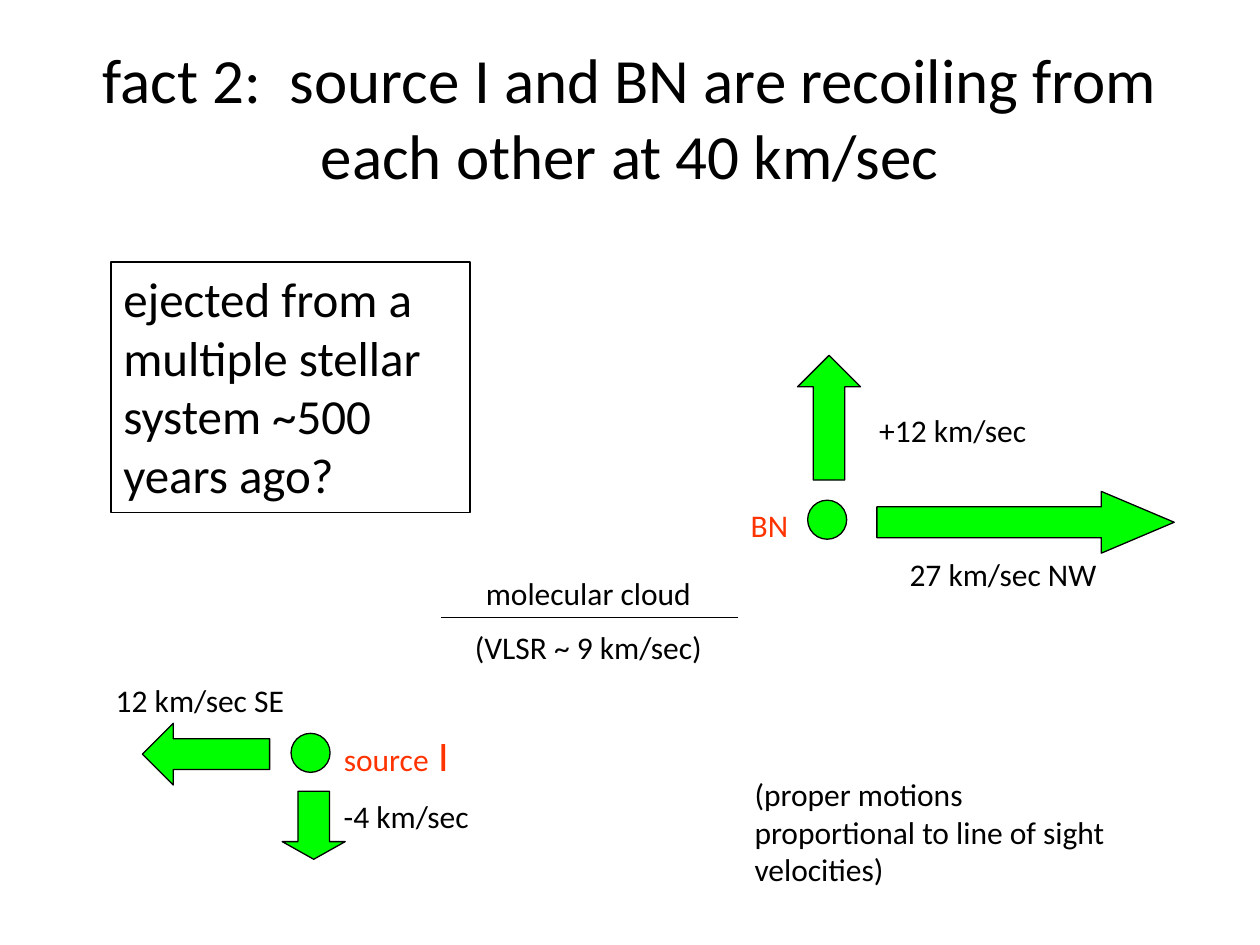
from lxml.etree import SubElement
from pptx import Presentation
from pptx.dml.color import RGBColor
from pptx.enum.shapes import MSO_CONNECTOR, MSO_SHAPE
from pptx.enum.text import MSO_ANCHOR, PP_ALIGN
from pptx.oxml.ns import qn
from pptx.util import Pt

SCALE = 9144  # EMU per px, 100 px to the inch
COLORS = {"ink": "000000", "motion": "00FF00", "star": "FF3300"}


def px(*lengths):
    return [length * SCALE for length in lengths]


class MotionSlide:
    font = "Calibri"
    line_width = Pt(0.75)

    def __init__(self, deck):
        self.page = deck.slides.add_slide(deck.slide_layouts[5])

    def color(self, name):
        return RGBColor.from_string(COLORS[name])

    def style_span(self, span, size, color="ink"):
        span.font.name = self.font
        span.font.size = Pt(size)
        span.font.color.rgb = self.color(color)

    def set_text(self, box, text, size, color="ink", align=PP_ALIGN.LEFT, anchor=MSO_ANCHOR.TOP):
        frame = box.text_frame
        frame.text = text
        frame.word_wrap = True
        frame.vertical_anchor = anchor
        for index, para in enumerate(frame.paragraphs):
            para.alignment = align
            para.space_before = Pt(size / 2 if index else 0)
            for span in para.runs:
                self.style_span(span, size, color)

    def title(self, text, *place):
        box = self.page.shapes.title
        box.left, box.top, box.width, box.height = px(*place)
        self.set_text(box, text, 36, align=PP_ALIGN.CENTER, anchor=MSO_ANCHOR.MIDDLE)

    def label(self, text, *place, **style):
        box = self.page.shapes.add_textbox(*px(*place))
        self.set_text(box, text, 18, **style)
        return box

    def shape(self, kind, *place, fill=None):
        shape = self.page.shapes.add_shape(kind, *px(*place))
        shape.shadow.inherit = False
        shape.line.color.rgb = self.color("ink")
        shape.line.width = self.line_width
        if fill:
            shape.fill.solid()
            shape.fill.fore_color.rgb = self.color(fill)
        else:
            shape.fill.background()
        return shape

    def star(self, left, top):
        self.shape(MSO_SHAPE.OVAL, left, top, 31, 31, fill="motion")

    def arrow(self, kind, head, *place):
        arrow = self.shape(kind, *place, fill="motion")
        arrow.adjustments[0] = 0.5
        arrow.adjustments[1] = head

    def framed_text(self, text, *place):
        self.set_text(self.shape(MSO_SHAPE.RECTANGLE, *place), text, 28)

    def line(self, *ends):
        line = self.page.shapes.add_connector(MSO_CONNECTOR.STRAIGHT, *px(*ends))
        line.line.color.rgb = self.color("ink")
        line.line.width = self.line_width
        SubElement(line._element.spPr, qn("a:effectLst"))


def main():
    deck = Presentation()
    deck.slide_width, deck.slide_height = px(1000, 750)
    slide = MotionSlide(deck)
    slide.title("fact 2:  source I and BN are recoiling from each other at 40 km/sec",
                50, 30, 900, 125)

    # BN and its velocities
    slide.arrow(MSO_SHAPE.RIGHT_ARROW, 1.18, 696, 390, 236, 49)
    slide.arrow(MSO_SHAPE.UP_ARROW, 0.5, 633, 282, 50, 99)
    slide.star(641, 397)
    slide.label("+12 km/sec", 688, 321, 220, 40)
    slide.label("27 km/sec NW", 712, 436, 189, 40)
    slide.label("BN", 586, 397, 55, 40, color="star")

    # Molecular cloud as the rest frame
    slide.line(350, 490, 586, 490)
    slide.label("molecular cloud\n(VLSR ~ 9 km/sec)", 357, 451, 220, 115,
                align=PP_ALIGN.CENTER)

    # Source I and its velocities
    slide.star(231, 582)
    slide.arrow(MSO_SHAPE.DOWN_ARROW, 0.28, 224, 628, 50, 54)
    slide.arrow(MSO_SHAPE.LEFT_ARROW, 0.5, 113, 574, 101, 49)
    slide.label("-4 km/sec", 263, 628, 204, 40)
    slide.label("12 km/sec SE", 82, 536, 181, 40)
    source = slide.label("source", 263, 574, 142, 50, color="star")
    numeral = source.text_frame.paragraphs[0].add_run()
    numeral.text = " I"
    slide.style_span(numeral, 24, "star")

    # Remarks
    slide.framed_text("ejected from a multiple stellar system ~500 years ago?",
                      88, 208, 285, 199)
    slide.label("(proper motions proportional to line of sight velocities)",
                589, 610, 317, 71)

    deck.save("out.pptx")


if __name__ == "__main__":
    main()
